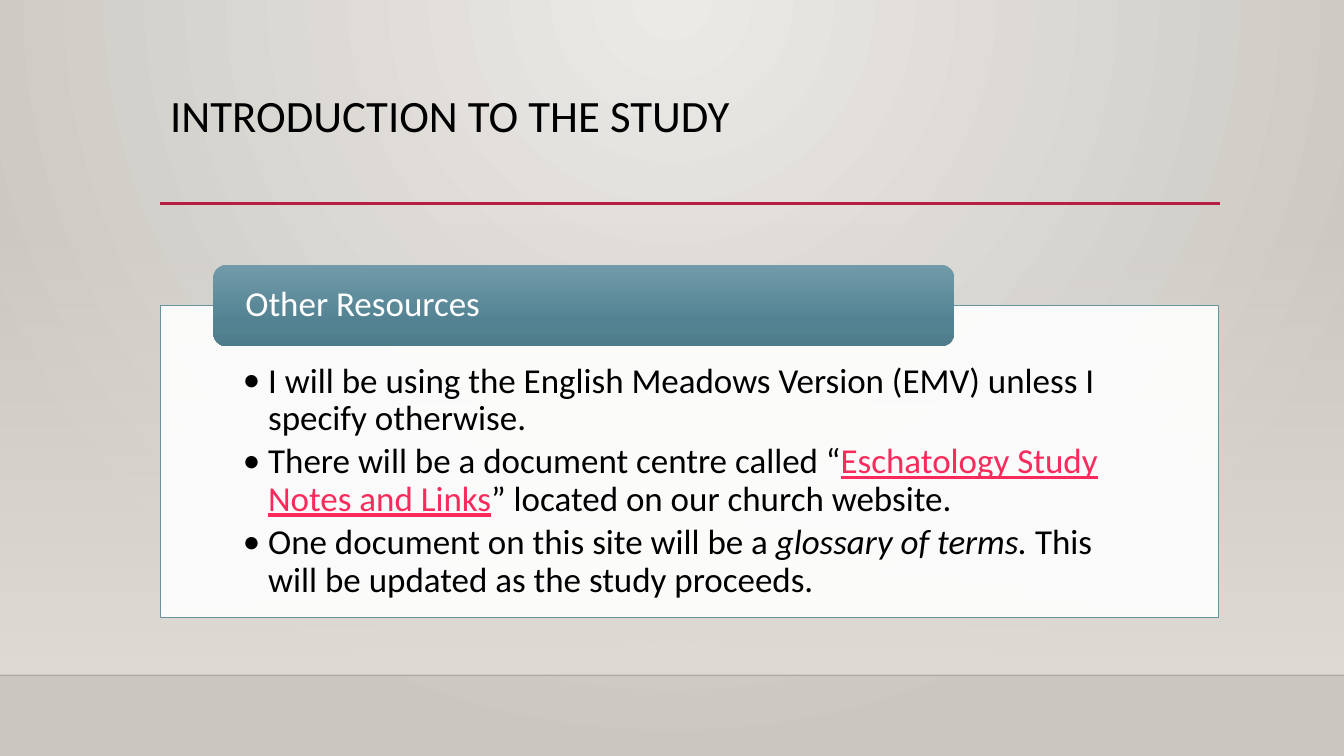
import pptx
import pptx.util
import pptx.dml.color
import pptx.enum.shapes
import pptx.enum.text
import pptx.oxml
import pptx.oxml.ns

TITLE = "INTRODUCTION TO THE STUDY"
HEADING = "Other Resources"
POINTS = [
    [("I will be using the English Meadows Version (EMV) unless I specify otherwise.", {})],
    [
        ("There will be a document centre called “", {}),
        ("Eschatology Study Notes and Links", {"color": "link", "underline": True}),
        ("” located on our church website.", {}),
    ],
    [
        ("One document on this site will be a ", {}),
        ("glossary of terms. ", {"italic": True}),
        ("This will be updated as the study proceeds.", {}),
    ],
]

THEME = {
    "font": "Calibri",
    "title_size": 32,
    "body_size": 25,
    "text": "000000",
    "light": "FFFFFF",
    "link": "FA2B5C",
    "rule": "B71E42",
    "floor_line": "000001",
    "panel_line": "6892A0",
    "backdrop": [(0, "ECEAE7", 100), (100, "CAC7C1", 100)],
    "wall": [(0, "DFDBD5", 0), (100, "DFDBD5", 100)],
    "tab": [(0, "729BA9", 100), (69, "538393", 100), (100, "4F7C8B", 100)],
}

WIDTH, HEIGHT = 13.33, 7.5
LEFT, CONTENT_WIDTH = 1.59, 10.5
WALL_TOP, FLOOR = 2.21, 6.7
RULE_TOP, RULE_RIGHT = 2.02, 12.1
PANEL_TOP, PANEL_HEIGHT = 3.03, 3.1
TAB_HEIGHT = 0.81
TAB_LEFT = LEFT + CONTENT_WIDTH * 0.05
TAB_WIDTH = CONTENT_WIDTH * 0.7
TAB_TOP = PANEL_TOP - TAB_HEIGHT / 2

Inches = pptx.util.Inches
SHAPES = pptx.enum.shapes.MSO_SHAPE
ANCHOR = pptx.enum.text.MSO_ANCHOR
CONNECTOR = pptx.enum.shapes.MSO_CONNECTOR


def rgb(name):
    return pptx.dml.color.RGBColor.from_string(THEME[name])


def add_child(parent, tag, **values):
    child = parent.makeelement(pptx.oxml.ns.qn(tag), values)
    parent.append(child)
    return child


def set_alpha(element, percent):
    for color in element.xpath(".//a:srgbClr"):
        add_child(color, "a:alpha", val=str(percent * 1000))


def set_gradient(fill, owner, stops, circle=False):
    fill.gradient()
    gradient = owner.xpath(".//a:gradFill")[0]
    for child in list(gradient):
        gradient.remove(child)
    stop_list = add_child(gradient, "a:gsLst")
    for position, color, alpha in stops:
        stop = add_child(stop_list, "a:gs", pos=str(position * 1000))
        add_child(stop, "a:srgbClr", val=color)
        set_alpha(stop, alpha)
    if circle:
        shade = add_child(gradient, "a:path", path="circle")
        add_child(shade, "a:fillToRect", l="43000", t="0", r="43000", b="100000")
    else:
        add_child(gradient, "a:lin", ang="5400000", scaled="0")


def add_block(page, kind, left, top, width, height):
    block = page.shapes.add_shape(
        kind, Inches(left), Inches(top), Inches(width), Inches(height))
    block.shadow.inherit = False
    block.line.fill.background()
    return block


def add_rule(page, left, right, top, color, weight):
    rule = page.shapes.add_connector(
        CONNECTOR.STRAIGHT, Inches(left), Inches(top), Inches(right), Inches(top))
    rule.line.color.rgb = rgb(color)
    rule.line.width = pptx.util.Pt(weight)
    add_child(rule.element.spPr, "a:effectLst")
    return rule


def set_frame(frame, insets, anchor):
    left, top, right, bottom = map(Inches, insets)
    settings = {
        "word_wrap": True, "vertical_anchor": anchor,
        "margin_left": left, "margin_top": top,
        "margin_right": right, "margin_bottom": bottom,
    }
    for name, value in settings.items():
        setattr(frame, name, value)


def write(frame, paragraphs, size, color, space_after=0, bullet=False):
    for index, spans in enumerate(paragraphs):
        para = frame.paragraphs[0] if index == 0 else frame.add_paragraph()
        para.alignment = pptx.enum.text.PP_ALIGN.LEFT
        para.line_spacing = 0.9
        para.space_after = pptx.util.Pt(space_after)
        if bullet:
            properties = para._p.get_or_add_pPr()
            properties.set("marL", str(Inches(0.25)))
            properties.set("indent", str(-Inches(0.25)))
            add_child(properties, "a:buFont", typeface=THEME["font"])
            add_child(properties, "a:buChar", char="•")
        for text, formats in spans:
            span = para.add_run()
            span.text = text
            values = {"name": THEME["font"], "size": pptx.util.Pt(THEME[size]), **formats}
            span.font.color.rgb = rgb(values.pop("color", color))
            for name, value in values.items():
                setattr(span.font, name, value)


def main():
    deck = pptx.Presentation()
    deck.slide_width, deck.slide_height = Inches(WIDTH), Inches(HEIGHT)
    page = deck.slides.add_slide(deck.slide_layouts[6])
    set_gradient(page.background.fill, page.element, THEME["backdrop"], circle=True)

    wall = add_block(page, SHAPES.RECTANGLE, 0, WALL_TOP, WIDTH, FLOOR - WALL_TOP)
    set_gradient(wall.fill, wall.element, THEME["wall"])
    floor_line = add_rule(page, 0, WIDTH, FLOOR, "floor_line", 1)
    set_alpha(floor_line.element.spPr, 20)
    add_rule(page, LEFT, RULE_RIGHT, RULE_TOP, "rule", 2.5)

    title = page.shapes.add_textbox(
        Inches(LEFT), Inches(0.88), Inches(CONTENT_WIDTH), Inches(1.15))
    set_frame(title.text_frame, (0.1, 0.05, 0.1, 0.05), ANCHOR.TOP)
    write(title.text_frame, [[(TITLE, {})]], "title_size", "text")

    panel = add_block(page, SHAPES.RECTANGLE, LEFT, PANEL_TOP, CONTENT_WIDTH, PANEL_HEIGHT)
    panel.fill.solid()
    panel.fill.fore_color.rgb = rgb("light")
    set_alpha(panel.element.spPr, 90)
    panel.line.color.rgb = rgb("panel_line")
    panel.line.width = pptx.util.Pt(0.75)
    set_frame(panel.text_frame, (0.82, 0.57, 0.82, 0.19), ANCHOR.TOP)
    write(panel.text_frame, POINTS, "body_size", "text", space_after=3.75, bullet=True)

    tab = add_block(page, SHAPES.ROUNDED_RECTANGLE, TAB_LEFT, TAB_TOP, TAB_WIDTH, TAB_HEIGHT)
    set_gradient(tab.fill, tab.element, THEME["tab"])
    set_frame(tab.text_frame, (0.28, 0, 0.28, 0), ANCHOR.MIDDLE)
    write(tab.text_frame, [[(HEADING, {})]], "body_size", "light")

    deck.save("out.pptx")


if __name__ == "__main__":
    main()
